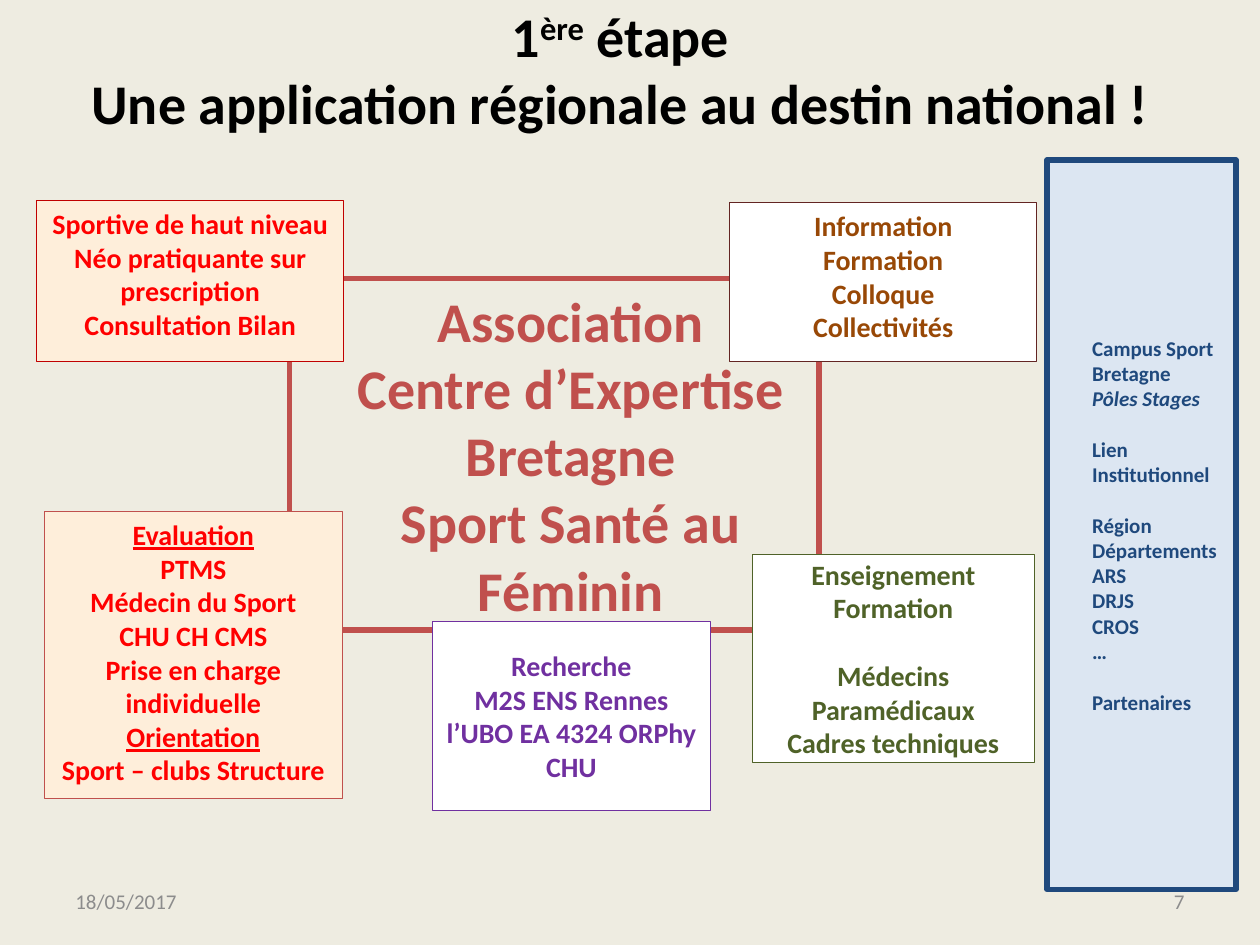
from dataclasses import dataclass
from typing import Optional

from pptx import Presentation
from pptx.dml.color import RGBColor
from pptx.enum.shapes import MSO_SHAPE
from pptx.enum.text import MSO_ANCHOR, PP_ALIGN
from pptx.util import Inches, Pt

COLORS = {
    "background": "EEECE1", "black": "000000", "white": "FFFFFF", "grey": "8C8C8C",
    "peach": "FEEEDA", "red": "FF0000", "dark red": "C00000", "brick": "C0504D",
    "maroon": "632523", "brown": "984806", "purple": "7030A0", "green": "4F6228",
    "pale blue": "DCE6F2", "navy": "1F497D",
}
FONT = "Calibri"
LINE_HEIGHT = 1.22


@dataclass(frozen=True)
class Box:
    left: float
    top: float
    width: float
    height: float
    lines: tuple[str, ...]
    ink: str
    border: str
    fill: Optional[str] = "white"
    border_width: float = 0.5
    size: int = 16
    anchor: MSO_ANCHOR = MSO_ANCHOR.MIDDLE
    align: PP_ALIGN = PP_ALIGN.CENTER
    indent: float = 0
    underlined: tuple[str, ...] = ()
    italic: tuple[str, ...] = ()
    spaced: tuple[str, ...] = ()


BOXES = (
    Box(2.3, 2.21, 4.2, 2.79,
        ("Association", "Centre d’Expertise Bretagne", "Sport Santé au Féminin"),
        "brick", "brick", fill=None, border_width=3, size=32, indent=0.26),
    Box(0.29, 1.59, 2.44, 1.28,
        ("Sportive de haut niveau", "Néo pratiquante sur prescription", "Consultation Bilan"),
        "red", "dark red", fill="peach", anchor=MSO_ANCHOR.TOP),
    Box(5.79, 1.61, 2.44, 1.26,
        ("Information", "Formation", "Colloque", "Collectivités"),
        "brown", "maroon", anchor=MSO_ANCHOR.TOP),
    Box(0.35, 4.06, 2.37, 2.28,
        ("Evaluation", "PTMS", "Médecin du Sport", "CHU CH CMS",
         "Prise en charge individuelle", "Orientation", "Sport – clubs Structure"),
        "red", "brick", fill="peach", anchor=MSO_ANCHOR.TOP,
        underlined=("Evaluation", "Orientation")),
    Box(3.43, 4.93, 2.21, 1.5,
        ("Recherche", "M2S ENS Rennes", "l’UBO EA 4324 ORPhy", "CHU"),
        "purple", "purple"),
    Box(5.97, 4.4, 2.24, 1.65,
        ("Enseignement", "Formation", "Médecins", "Paramédicaux", "Cadres techniques"),
        "green", "green", spaced=("Médecins",)),
    Box(8.31, 1.27, 1.5, 5.79,
        ("Campus Sport", "Bretagne", "Pôles Stages", "Lien", "Institutionnel", "Région",
         "Départements", "ARS", "DRJS", "CROS", "…", "Partenaires"),
        "navy", "navy", fill="pale blue", border_width=3, size=12,
        align=PP_ALIGN.LEFT, indent=0.26, italic=("Pôles Stages",),
        spaced=("Lien", "Région", "Partenaires")),
)


def rgb(name: str) -> RGBColor:
    """Return the named colour."""
    return RGBColor.from_string(COLORS[name])


def style_font(font, size: int, ink: str, bold: bool = True) -> None:
    """Apply the slide's typeface with a size, colour and weight."""
    font.name = FONT
    font.size = Pt(size)
    font.bold = bold
    font.color.rgb = rgb(ink)


def draw_box(slide, box: Box) -> None:
    """Draw a bordered rectangle with one paragraph per line."""
    shape = slide.shapes.add_shape(
        MSO_SHAPE.RECTANGLE, Inches(box.left), Inches(box.top),
        Inches(box.width), Inches(box.height))
    shape.shadow.inherit = False
    if box.fill:
        shape.fill.solid()
        shape.fill.fore_color.rgb = rgb(box.fill)
    else:
        shape.fill.background()
    shape.line.color.rgb = rgb(box.border)
    shape.line.width = Pt(box.border_width)
    frame = shape.text_frame
    frame.word_wrap = True
    frame.vertical_anchor = box.anchor
    frame.text = "\n".join(box.lines)
    for paragraph, line in zip(frame.paragraphs, box.lines):
        paragraph.alignment = box.align
        if box.indent:
            paragraph._p.get_or_add_pPr().set("marL", str(Inches(box.indent)))
        if line in box.spaced:
            paragraph.space_before = Pt(round(box.size * LINE_HEIGHT, 1))
        for run in paragraph.runs:
            style_font(run.font, box.size, box.ink)
            if line in box.underlined:
                run.font.underline = True
            if line in box.italic:
                run.font.italic = True


def add_text(slide, left: float, top: float, width: float, height: float, align: PP_ALIGN):
    """Add a wrapped, vertically centred text box and return its paragraph."""
    frame = slide.shapes.add_textbox(
        Inches(left), Inches(top), Inches(width), Inches(height)).text_frame
    frame.word_wrap = True
    frame.vertical_anchor = MSO_ANCHOR.MIDDLE
    paragraph = frame.paragraphs[0]
    paragraph.alignment = align
    return paragraph


def draw_title(slide) -> None:
    """Draw the two-line heading with its superscript ordinal."""
    heading = add_text(slide, 0.35, -0.19, 9.15, 1.47, PP_ALIGN.CENTER)
    for part in ("1", "ère", " étape", "Une application régionale au destin national !"):
        if part.startswith("Une"):
            heading.add_line_break()
        run = heading.add_run()
        run.text = part
        style_font(run.font, 32, "black")
        if part == "ère":
            run.font._element.set("baseline", "30000")


def draw_footer(slide, left: float, label: str, align: PP_ALIGN) -> None:
    """Draw one grey footer entry."""
    footer = add_text(slide, left, 6.95, 2.33, 0.4, align)
    footer.text = label
    style_font(footer.runs[0].font, 12, "grey", bold=False)


def main() -> None:
    """Build and save the slide."""
    deck = Presentation()
    deck.slide_width, deck.slide_height = Inches(10), Inches(7.5)
    slide = deck.slides.add_slide(deck.slide_layouts[6])
    slide.background.fill.solid()
    slide.background.fill.fore_color.rgb = rgb("background")
    draw_title(slide)
    draw_footer(slide, 0.5, "18/05/2017", PP_ALIGN.LEFT)
    draw_footer(slide, 7.17, "7", PP_ALIGN.RIGHT)
    for box in BOXES:
        draw_box(slide, box)
    deck.save("out.pptx")


if __name__ == "__main__":
    main()
